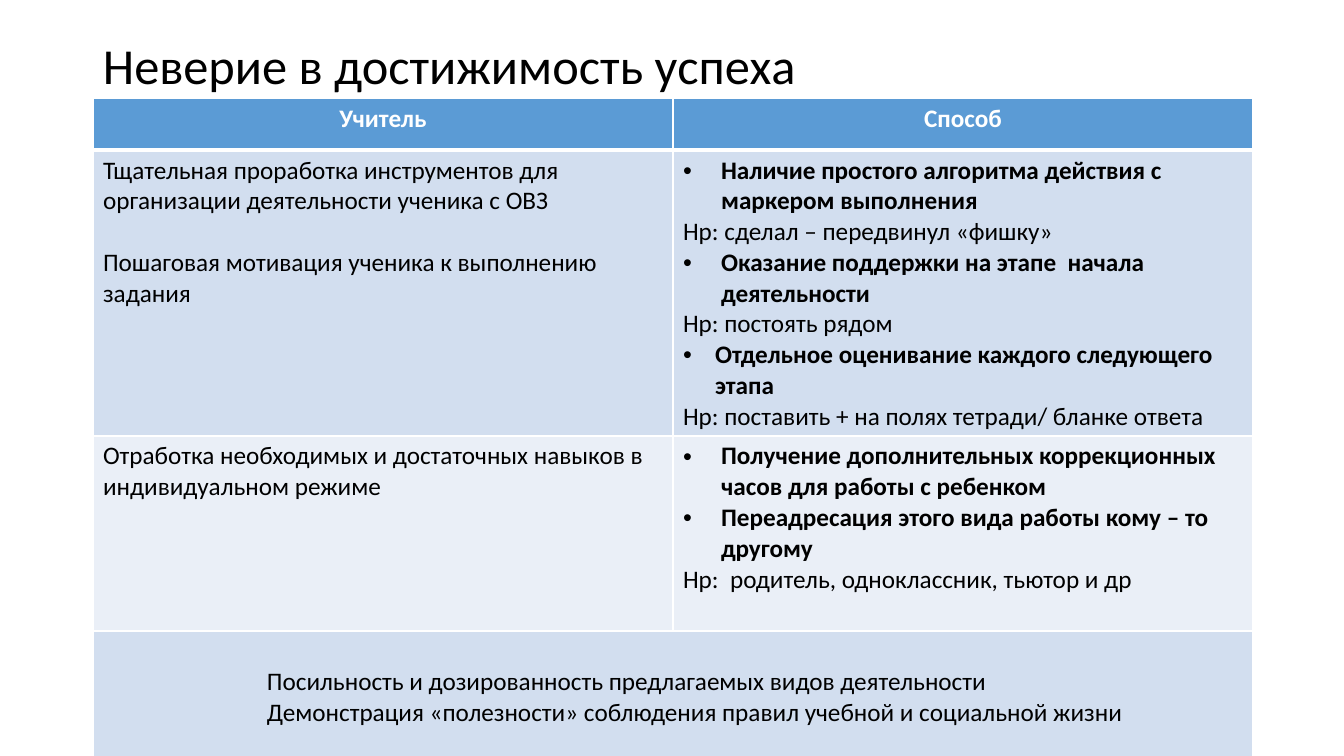
from pptx import Presentation
from pptx.dml.color import RGBColor
from pptx.enum.text import MSO_ANCHOR, PP_ALIGN
from pptx.oxml.ns import qn
from pptx.util import Pt
from lxml.etree import SubElement, Element

# Content: each line is (text, hanging indent in px, space before in points);
# a line with a hanging indent is bulleted and bold
TITLE = "Неверие в достижимость успеха"
HEADS = ["Учитель", "Способ"]
BODY = [
    (
        [("Тщательная проработка инструментов для организации деятельности ученика с ОВЗ", 0, 0),
         ("Пошаговая мотивация ученика к выполнению задания", 0, 22)],
        [("Наличие простого алгоритма действия с маркером выполнения", 38, 0),
         ("Нр: сделал – передвинул «фишку»", 0, 0),
         ("Оказание поддержки на этапе  начала деятельности", 38, 0),
         ("Нр: постоять рядом", 0, 0),
         ("Отдельное оценивание каждого следующего этапа", 32, 0),
         ("Нр: поставить + на полях тетради/ бланке ответа", 0, 0)],
    ),
    (
        [("Отработка необходимых и достаточных навыков в индивидуальном режиме", 0, 0)],
        [("Получение дополнительных коррекционных часов для работы с ребенком", 38, 0),
         ("Переадресация этого вида работы кому – то другому", 38, 0),
         ("Нр:  родитель, одноклассник, тьютор и др", 0, 0)],
    ),
]
FOOT = [
    ("Посильность и дозированность предлагаемых видов деятельности", 0, 0),
    ("Демонстрация «полезности» соблюдения правил учебной и социальной жизни", 0, 0),
]

# Look
FONT = "Calibri"
BLACK = RGBColor(0x00, 0x00, 0x00)
WHITE = RGBColor(0xFF, 0xFF, 0xFF)
BLUE = RGBColor(0x5B, 0x9B, 0xD5)
BANDS = [RGBColor(0xD2, 0xDE, 0xEF), RGBColor(0xEA, 0xEF, 0xF7)]

# Sizes in px
WIDE, HIGH = 1344, 756
LEFT, TOP, COL = 93, 98, 580
ROWS = [52, 286, 195, 128]
SCALE = 914400 / 100.8


def px(n):
    return round(n * SCALE)


def add_run(para, text, size, color, bold=False):
    run = para.add_run()
    run.text = text
    font = run.font
    font.name, font.size, font.bold = FONT, Pt(size), bold
    font.color.rgb = color


def add_bullet(para, hang):
    props = para._p.get_or_add_pPr()
    props.set("marL", str(px(hang)))
    props.set("indent", str(-px(hang)))
    SubElement(props, qn("a:buFont")).set("typeface", "Arial")
    SubElement(props, qn("a:buChar")).set("char", "•")


def fill_cell(cell, lines, color):
    paint(cell, color)
    frame = cell.text_frame
    for i, (text, hang, gap) in enumerate(lines):
        para = frame.add_paragraph() if i else frame.paragraphs[0]
        if gap:
            para.space_before = Pt(gap)
        if hang:
            add_bullet(para, hang)
        add_run(para, text, 18, BLACK, bool(hang))


def paint(cell, color, low=1):
    cell.fill.solid()
    cell.fill.fore_color.rgb = color
    props = cell._tc.get_or_add_tcPr()
    for i, (side, width) in enumerate([("L", 1), ("R", 1), ("T", 1), ("B", low)]):
        line = Element(qn("a:ln" + side), w=str(Pt(width)))
        solid = SubElement(line, qn("a:solidFill"))
        SubElement(solid, qn("a:srgbClr")).set("val", str(WHITE))
        props.insert(i, line)


deck = Presentation()
deck.slide_width, deck.slide_height = px(WIDE), px(HIGH)
slide = deck.slides.add_slide(deck.slide_layouts[6])

# Title
box = slide.shapes.add_textbox(px(LEFT), px(40), px(2 * COL), px(57))
frame = box.text_frame
frame.word_wrap = True
frame.vertical_anchor = MSO_ANCHOR.MIDDLE
frame.paragraphs[0].line_spacing = 0.9
add_run(frame.paragraphs[0], TITLE, 36, BLACK)

# Table grid
table = slide.shapes.add_table(
    len(ROWS), len(HEADS), px(LEFT), px(TOP), px(2 * COL), px(sum(ROWS))).table
table.horz_banding = False
for col in table.columns:
    col.width = px(COL)
for row, high in zip(table.rows, ROWS):
    row.height = px(high)

# Header row
for c, head in enumerate(HEADS):
    cell = table.cell(0, c)
    paint(cell, BLUE, 3)
    para = cell.text_frame.paragraphs[0]
    para.alignment = PP_ALIGN.CENTER
    add_run(para, head, 18, WHITE, True)

# Body rows
for r, pair in enumerate(BODY):
    for c, lines in enumerate(pair):
        fill_cell(table.cell(r + 1, c), lines, BANDS[r % 2])

# Closing row across both columns
last = table.cell(len(ROWS) - 1, 0)
last.merge(table.cell(len(ROWS) - 1, 1))
fill_cell(last, FOOT, BANDS[0])
last.margin_left, last.margin_top = px(174), px(36)

deck.save("out.pptx")
